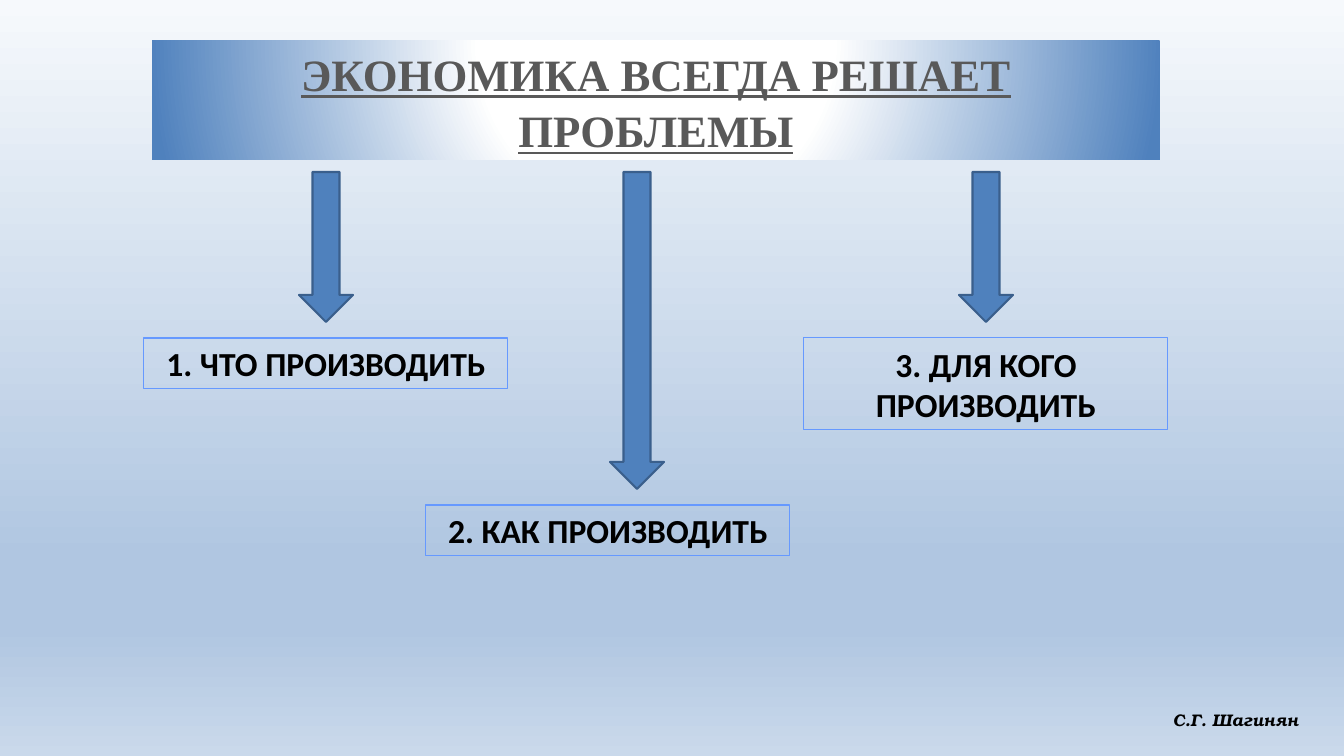
from dataclasses import dataclass

from lxml import etree
from pptx import Presentation
from pptx import util as u
from pptx.dml.color import RGBColor
from pptx.enum import shapes, text
from pptx.oxml.ns import qn

TITLE = "ЭКОНОМИКА ВСЕГДА РЕШАЕТ ПРОБЛЕМЫ"
AUTHOR = "С.Г. Шагинян"
QUESTIONS = [
    {"label": "1. ЧТО ПРОИЗВОДИТЬ", "arrow_left": 299, "arrow_height": 150, "box_left": 144, "lines": 1},
    {"label": "2. КАК ПРОИЗВОДИТЬ", "arrow_left": 610, "arrow_height": 317, "box_left": 426, "lines": 1},
    {"label": "3. ДЛЯ КОГО ПРОИЗВОДИТЬ", "arrow_left": 959, "arrow_height": 150, "box_left": 804, "lines": 2},
]

SLIDE = (1344, 756)
TITLE_BOX = (152, 41, 1008, 119)
AUTHOR_BOX = (1163, 705, 146, 30)
ARROW_TOP, ARROW_WIDTH = 172, 54
ARROW_GAP = 16
LABEL_WIDTH, LABEL_PADDING, LABEL_LINE = 364, 10, 41


@dataclass(frozen=True)
class Theme:
    background: tuple = ((0, "F6F9FC"), (74, "B0C6E1"), (83, "B0C6E1"), (100, "CAD9EB"))
    banner: tuple = ((0, "FFFFFF"), (35, "FFFFFF"), (100, "4F81BD"))
    title: str = "595959"
    ink: str = "000000"
    arrow: str = "4F81BD"
    arrow_line: str = "3A5F8C"
    label_line: str = "6699FF"
    title_size: int = 32
    label_size: int = 24
    author_size: int = 12
    title_font: str = "Times New Roman"
    label_font: str = "Calibri"
    author_font: str = "TeX Gyre Bonum"


THEME = Theme()


def px(length):
    return u.Emu(round(length * 914400 / 100.8))


def color(value):
    return RGBColor.from_string(value)


def set_gradient(fill, owner, stops):
    fill.gradient()
    gradient = owner.find(".//" + qn("a:gradFill"))
    for child in list(gradient):
        gradient.remove(child)
    stop_list = etree.SubElement(gradient, qn("a:gsLst"))
    for position, value in stops:
        stop = etree.SubElement(stop_list, qn("a:gs"), pos=str(position * 1000))
        etree.SubElement(stop, qn("a:srgbClr"), val=value)
    return gradient


def add_shape(page, kind, bounds, line=None, width=0.75):
    shape = page.shapes.add_shape(kind, *map(px, bounds))
    shape.shadow.inherit = False
    shape.fill.background()
    if line:
        shape.line.color.rgb = color(line)
        shape.line.width = u.Pt(width)
    else:
        shape.line.fill.background()
    return shape


def write(shape, words, font, size, ink, align=text.PP_ALIGN.CENTER, wrap=True):
    frame = shape.text_frame
    frame.word_wrap = wrap
    para = frame.paragraphs[0]
    para.text = words
    para.alignment = align
    para.font.name = font
    para.font.size = u.Pt(size)
    para.font.bold = True
    para.font.color.rgb = color(ink)
    return para


def add_banner(page):
    banner = add_shape(page, shapes.MSO_SHAPE.RECTANGLE, TITLE_BOX)
    gradient = set_gradient(banner.fill, banner._element, THEME.banner)
    circle = etree.SubElement(gradient, qn("a:path"), path="circle")
    etree.SubElement(circle, qn("a:fillToRect"), l="50000", t="-80000", r="50000", b="180000")
    para = write(banner, TITLE, THEME.title_font, THEME.title_size, THEME.title)
    para.font.underline = True
    para.line_spacing = 1.05


def add_author(page):
    box = page.shapes.add_textbox(*map(px, AUTHOR_BOX))
    para = write(box, AUTHOR, THEME.author_font, THEME.author_size, THEME.ink,
                 text.PP_ALIGN.LEFT, False)
    para.font.italic = True


def add_question(page, question):
    height = question["arrow_height"]
    arrow = add_shape(page, shapes.MSO_SHAPE.DOWN_ARROW,
                      (question["arrow_left"], ARROW_TOP, ARROW_WIDTH, height),
                      THEME.arrow_line, 1.5)
    arrow.fill.solid()
    arrow.fill.fore_color.rgb = color(THEME.arrow)
    bounds = (question["box_left"], ARROW_TOP + height + ARROW_GAP,
              LABEL_WIDTH, LABEL_PADDING + LABEL_LINE * question["lines"])
    label = add_shape(page, shapes.MSO_SHAPE.RECTANGLE, bounds, THEME.label_line)
    write(label, question["label"], THEME.label_font, THEME.label_size, THEME.ink)


def main():
    deck = Presentation()
    deck.slide_width, deck.slide_height = map(px, SLIDE)
    page = deck.slides.add_slide(deck.slide_layouts[6])
    gradient = set_gradient(page.background.fill, page._element, THEME.background)
    etree.SubElement(gradient, qn("a:lin"), ang="5400000", scaled="0")
    add_banner(page)
    add_author(page)
    for question in QUESTIONS:
        add_question(page, question)
    deck.save("out.pptx")


if __name__ == "__main__":
    main()
